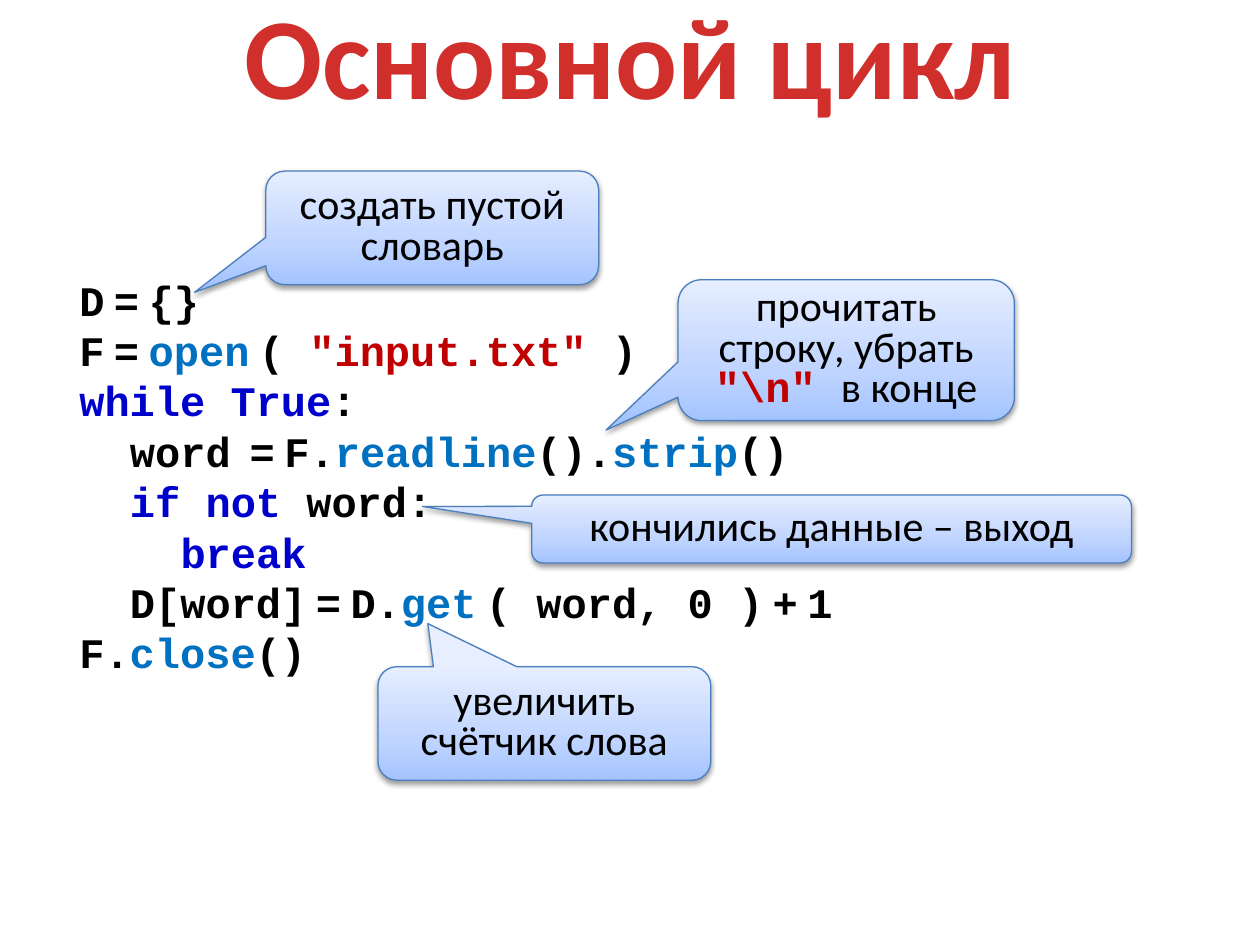
from lxml import etree
from pptx import Presentation
from pptx.dml.color import RGBColor
from pptx.enum.shapes import MSO_SHAPE
from pptx.enum.text import MSO_ANCHOR, PP_ALIGN
from pptx.oxml.ns import qn
from pptx.util import Cm, Pt

CALLOUT = MSO_SHAPE.ROUNDED_RECTANGULAR_CALLOUT
MIDDLE = MSO_ANCHOR.MIDDLE
CENTER, JUSTIFY = PP_ALIGN.CENTER, PP_ALIGN.JUSTIFY

THEME = {
    "title": {"name": "Calibri", "size": Pt(66), "bold": True},
    "note": {"name": "Calibri", "size": Pt(24), "bold": False},
    "code": {"name": "Courier New", "size": Pt(24), "bold": True},
    "gap": {"name": "Calibri", "size": Pt(24), "bold": True},
    "colors": {"text": "000000", "call": "0070C0", "string": "C00000",
               "keyword": "0000CC", "outline": "4B7EBC"},
    "title_fill": ([(0, "FC7C7A"), (75, "D02F2C"), (100, "C70500")], 270),
    "note_fill": ([(0, "A4C4FF"), (35, "BFD4FF"), (100, "E6EEFF")], 90),
}

# Content: code lines as (level, [(text, color)]); "~" is a narrow space
TITLE = "Основной цикл"
CODE = [
    (0, [("D~=~{}", "text")]),
    (0, [("F~=~", "text"), ("open~", "call"), ("( ", "text"),
         ('"input.txt"', "string"), (" )", "text")]),
    (0, [("while True", "keyword"), (":", "text")]),
    (1, [("word~~=~F.", "text"), ("readline", "call"), ("().", "text"),
         ("strip", "call"), ("()", "text")]),
    (1, [("if not", "keyword"), (" word:", "text")]),
    (2, [("break", "keyword")]),
    (1, [("D[word]~=~D.", "text"), ("get~", "call"),
         ("( word, 0 )~+~1", "text")]),
    (0, [("F.", "text"), ("close", "call"), ("()", "text")]),
]
# Callouts: box in cm, pointer offset, runs as (text, style, color)
CALLOUTS = [
    ((5.36, 3.45, 6.71, 2.29), (0.714, 0.567),
     [("создать пустой словарь", "note", "text")]),
    ((13.67, 5.64, 6.78, 2.84), (0.714, 0.567),
     [("прочитать строку, убрать ", "note", "text"),
      ('"\\n" ', "code", "string"), ("в конце", "note", "text")]),
    ((10.72, 9.98, 12.09, 1.37), (0.682, -0.331),
     [("кончились данные – выход", "note", "text")]),
    ((7.62, 13.44, 6.71, 2.29), (0.35, -0.879),
     [("увеличить счётчик слова", "note", "text")]),
]


def rgb(name):
    return RGBColor.from_string(THEME["colors"][name])


def add_run(p, text, style, color="text"):
    r = p.add_run()
    r.text = text
    for key, value in THEME[style].items():
        setattr(r.font, key, value)
    r.font.color.rgb = rgb(color)
    return r


def add_code(p, text, color):
    """Write code text, setting each narrow space in its own font."""
    for i, part in enumerate(text.split("~")):
        if i:
            add_run(p, " ", "gap", color)
        if part:
            add_run(p, part, "code", color)


def set_gradient(fill, owner, stops, angle):
    fill.gradient()
    fill.gradient_angle = angle
    gs_list = owner.find(".//" + qn("a:gsLst"))
    for gs in list(gs_list):
        gs_list.remove(gs)
    for position, color in stops:
        gs = etree.SubElement(gs_list, qn("a:gs"), pos=str(position * 1000))
        etree.SubElement(gs, qn("a:srgbClr"), val=color)


def add_shadow(sp):
    sp.shadow.inherit = False
    effects = sp._element.spPr.find(qn("a:effectLst"))
    shadow = etree.SubElement(
        effects, qn("a:outerShdw"), blurRad=str(Pt(3.1)), dist=str(Pt(1.6)),
        dir="5400000", rotWithShape="0")
    color = etree.SubElement(shadow, qn("a:srgbClr"), val="000000")
    etree.SubElement(color, qn("a:alpha"), val="38000")


def text_frame(sp):
    tf = sp.text_frame
    tf.word_wrap = True
    tf.vertical_anchor = MIDDLE
    return tf


prs = Presentation()
prs.slide_width, prs.slide_height = Cm(25.4), Cm(19.05)
s = prs.slides.add_slide(prs.slide_layouts[6])

# Title
tf = text_frame(s.shapes.add_textbox(0, 0, prs.slide_width, Cm(2.16)))
p = tf.paragraphs[0]
p.alignment = CENTER
r = add_run(p, TITLE, "title")
set_gradient(r.font.fill, r._r, *THEME["title_fill"])

# Program code, indented by level
tf = text_frame(s.shapes.add_textbox(Cm(1.09), Cm(5.36), Cm(17.2), Cm(8.46)))
for i, (level, parts) in enumerate(CODE):
    p = tf.add_paragraph() if i else tf.paragraphs[0]
    p.alignment = JUSTIFY
    pPr = p._p.get_or_add_pPr()
    pPr.set("marL", str(Cm(0.51 + 1.02 * level)))
    pPr.set("indent", str(Cm(-0.25)))
    for text, color in parts:
        add_code(p, text, color)

# Callouts, mirrored so that the pointers face left
for box, pointer, runs in CALLOUTS:
    sp = s.shapes.add_shape(CALLOUT, *map(Cm, box))
    sp._element.spPr.find(qn("a:xfrm")).set("flipH", "1")
    for i, value in enumerate((*pointer, 0.167)):
        sp.adjustments[i] = value
    set_gradient(sp.fill, sp._element.spPr, *THEME["note_fill"])
    sp.line.color.rgb = rgb("outline")
    sp.line.width = Pt(0.75)
    add_shadow(sp)
    p = text_frame(sp).paragraphs[0]
    p.alignment = CENTER
    p.line_spacing = 0.8
    for text, style, color in runs:
        add_run(p, text, style, color)

prs.save("out.pptx")
